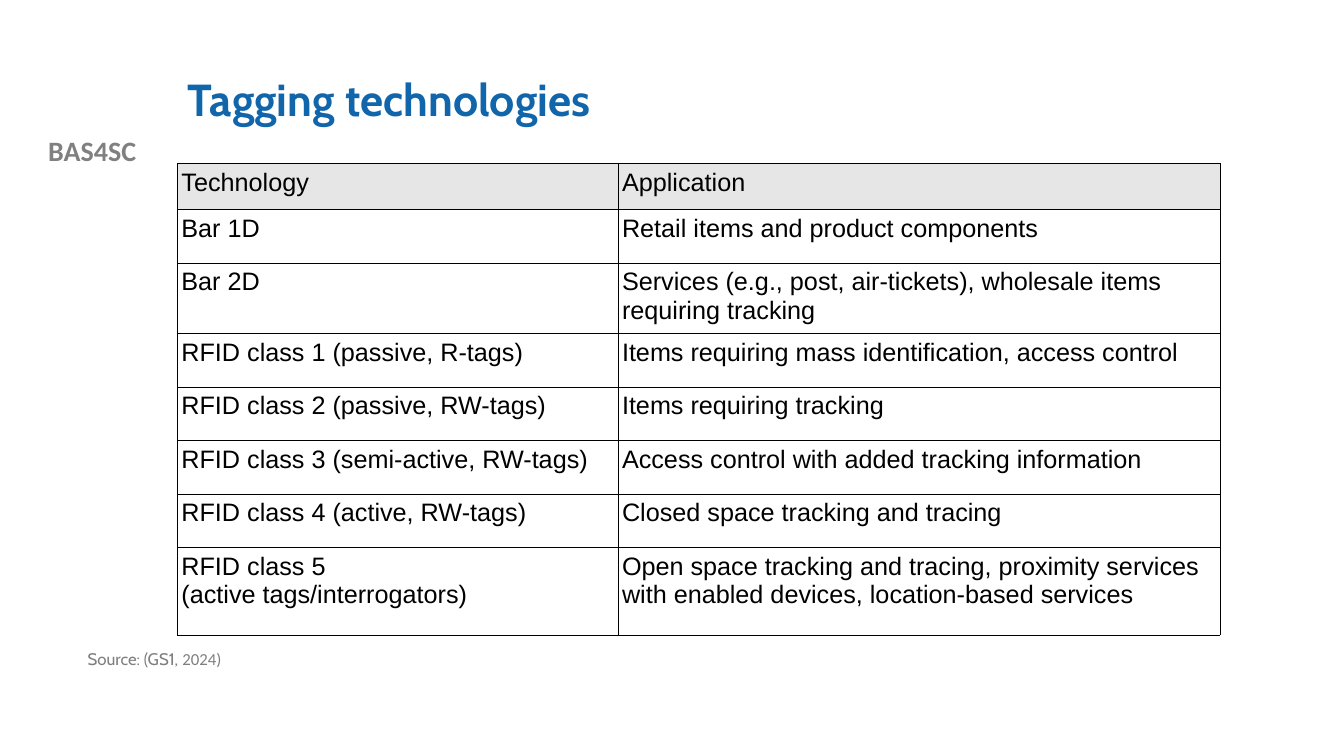
from lxml.etree import SubElement
from pptx import Presentation
from pptx.dml.color import RGBColor
from pptx.enum.text import MSO_ANCHOR as Anchor, PP_ALIGN as Align
from pptx.oxml.ns import qn
from pptx.util import Inches, Pt

BODY = {"name": "Arial", "size": Pt(18), "bold": False}
BLACK = "000000"
HEADER_FILL = "E7E6E6"
COLUMN_WIDTHS = [4.37, 5.97]
ROW_HEIGHTS = [0.46] + [0.53] * 6 + [0.87]
ROWS = [
    ("Technology", "Application"),
    ("Bar 1D", "Retail items and product components"),
    ("Bar 2D", "Services (e.g., post, air-tickets), wholesale items requiring tracking"),
    ("RFID class 1 (passive, R-tags)", "Items requiring mass identification, access control"),
    ("RFID class 2 (passive, RW-tags)", "Items requiring tracking"),
    ("RFID class 3 (semi-active, RW-tags)", "Access control with added tracking information"),
    ("RFID class 4 (active, RW-tags)", "Closed space tracking and tracing"),
    ("RFID class 5\v(active tags/interrogators)",
     "Open space tracking and tracing, proximity services with enabled devices, "
     "location-based services"),
]
TEXT_BOXES = [
    # position and size, anchor, paragraph format, runs of (text, color, font format)
    ((0, 1.28, 1.83, 0.43), Anchor.TOP, {"alignment": Align.CENTER},
     [("BAS4SC", "808080", {"name": "Calibri", "size": Pt(20), "bold": True})]),
    ((1.76, 0.4, 10.66, 1.22), Anchor.MIDDLE, {"line_spacing": 0.9},
     [("Tagging technologies", "1065AB", {"name": "Cabin", "size": Pt(32), "bold": True})]),
    ((0.77, 6.41, 5.01, 0.52), Anchor.TOP, {"line_spacing": 0.9},
     [("Source: (GS1,", "7F7F7F", {"name": "Cabin", "size": Pt(12)}),
      (" 2024)", "7F7F7F", {"name": "Calibri", "size": Pt(12)})]),
]


def set_font(font, color, font_format):
    font.color.rgb = RGBColor.from_string(color)
    for attribute, value in font_format.items():
        setattr(font, attribute, value)


def add_borders(cell, color, width):
    properties = cell._tc.get_or_add_tcPr()
    for index, side in enumerate(("a:lnL", "a:lnR", "a:lnT", "a:lnB")):
        line = properties.makeelement(qn(side), {"w": str(Pt(width))})
        fill = SubElement(line, qn("a:solidFill"))
        SubElement(fill, qn("a:srgbClr"), val=color)
        properties.insert(index, line)


presentation = Presentation()
presentation.slide_width = Inches(13.33)
presentation.slide_height = Inches(7.5)
slide = presentation.slides.add_slide(presentation.slide_layouts[6])

for place, anchor, paragraph_format, runs in TEXT_BOXES:
    text_frame = slide.shapes.add_textbox(*map(Inches, place)).text_frame
    text_frame.word_wrap = True
    text_frame.vertical_anchor = anchor
    paragraph = text_frame.paragraphs[0]
    for attribute, value in paragraph_format.items():
        setattr(paragraph, attribute, value)
    for text, color, font_format in runs:
        run = paragraph.add_run()
        run.text = text
        set_font(run.font, color, font_format)

table = slide.shapes.add_table(
    len(ROWS), len(COLUMN_WIDTHS), Inches(1.76), Inches(1.62),
    Inches(sum(COLUMN_WIDTHS)), Inches(sum(ROW_HEIGHTS))).table
table.first_row = False
table.horz_banding = False
for column, width in zip(table.columns, COLUMN_WIDTHS):
    column.width = Inches(width)

for row_index, (row, height, texts) in enumerate(zip(table.rows, ROW_HEIGHTS, ROWS)):
    row.height = Inches(height)
    for cell, text in zip(row.cells, texts):
        cell.margin_left = cell.margin_right = Inches(0.04)
        if row_index == 0:
            cell.fill.solid()
            cell.fill.fore_color.rgb = RGBColor.from_string(HEADER_FILL)
        else:
            cell.fill.background()
        add_borders(cell, BLACK, 0.57)
        paragraph = cell.text_frame.paragraphs[0]
        paragraph.text = text
        for run in paragraph.runs:
            set_font(run.font, BLACK, BODY)

presentation.save("out.pptx")
